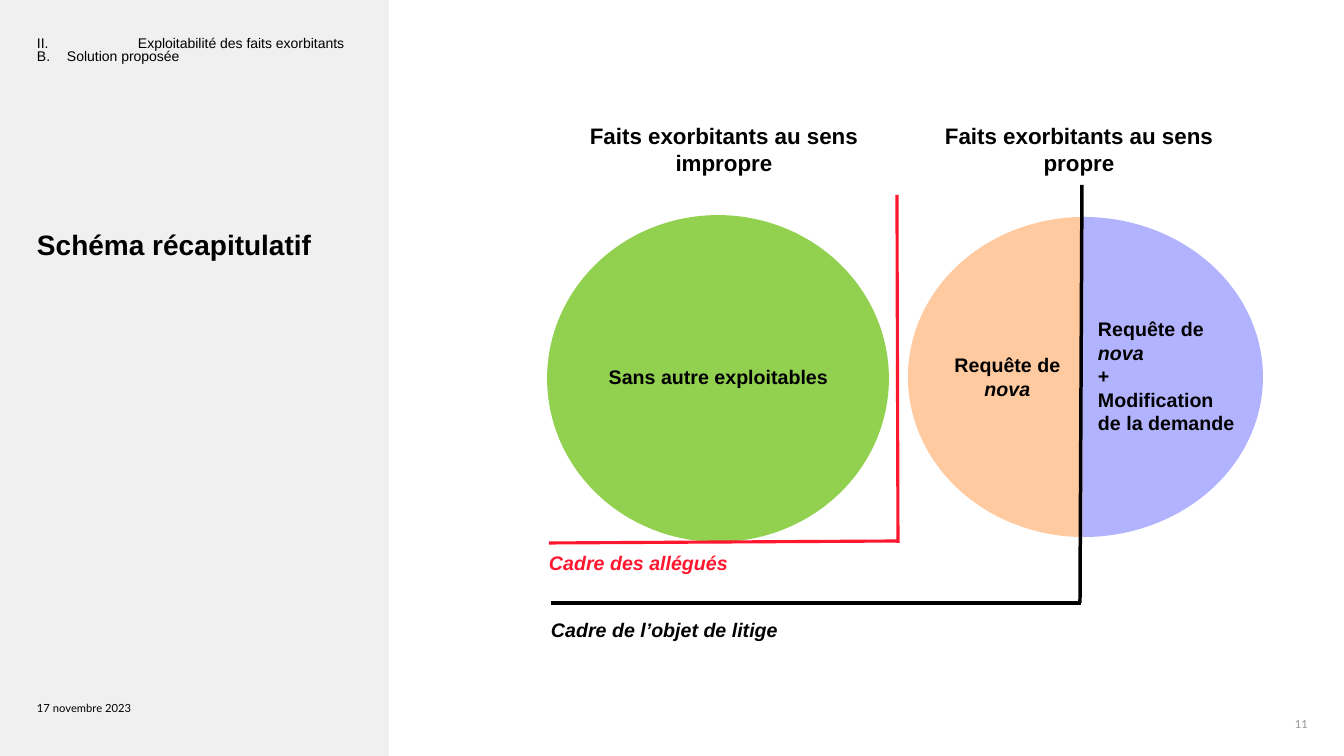
from pptx import Presentation
from pptx import util as u
from pptx.dml.color import RGBColor
from pptx.enum import shapes, text
from pptx.oxml.xmlchemy import OxmlElement

PX = 914400 / 100.8
BLACK, RED, GREY, PANEL = "000000", "FF172F", "969696", "F0F0F0"
GREEN, ORANGE, VIOLET = "92D050", "FFCA9F", "B2B3FF"
LEFT, CENTER, RIGHT = text.PP_ALIGN.LEFT, text.PP_ALIGN.CENTER, text.PP_ALIGN.RIGHT
TOP, MIDDLE, BOTTOM = text.MSO_ANCHOR.TOP, text.MSO_ANCHOR.MIDDLE, text.MSO_ANCHOR.BOTTOM
LINE_BREAK = ("\n", False)


def px(length):
    return u.Emu(round(length * PX))


def color(hex_string):
    return RGBColor.from_string(hex_string)


def add_shape(slide, kind, box, fill, line_width=0):
    shape = slide.shapes.add_shape(kind, *map(px, box))
    shape.shadow.inherit = False
    shape.fill.solid()
    shape.fill.fore_color.rgb = color(fill)
    if line_width:
        shape.line.color.rgb = color(fill)
        shape.line.width = u.Pt(line_width)
    else:
        shape.line.fill.background()
    return shape


def add_half_disc(slide, box, fill, start, end):
    """Draw a pie between two angles, in degrees clockwise from the right."""
    pie = add_shape(slide, shapes.MSO_SHAPE.PIE, box, fill, 1.5)
    for index, angle in enumerate((start, end)):
        pie.adjustments[index] = angle * 0.6


def add_line(slide, begin, end, line_color, width):
    line = slide.shapes.add_connector(
        shapes.MSO_CONNECTOR.STRAIGHT, *map(px, begin + end))
    line.line.color.rgb = color(line_color)
    line.line.width = u.Pt(width)
    line._element.spPr.append(OxmlElement("a:effectLst"))


def add_text(slide, box, paragraphs, size, bold=False, italic=False, font="Arial",
             text_color=BLACK, align=LEFT, anchor=TOP, before=0, spacing=1.0, hanging=0):
    """Write paragraphs; each is a string or a list of (string, italic) runs."""
    frame = slide.shapes.add_textbox(*map(px, box)).text_frame
    frame.word_wrap = True
    frame.vertical_anchor = anchor
    frame.margin_left = frame.margin_top = frame.margin_right = frame.margin_bottom = 0
    for index, content in enumerate(paragraphs):
        paragraph = frame.add_paragraph() if index else frame.paragraphs[0]
        paragraph.alignment = align
        paragraph.space_before = u.Pt(before)
        paragraph.line_spacing = spacing
        paragraph.font.name = font
        paragraph.font.size = u.Pt(size)
        paragraph.font.bold = bold
        paragraph.font.color.rgb = color(text_color)
        if hanging:
            properties = paragraph._p.get_or_add_pPr()
            properties.set("marL", str(px(hanging)))
            properties.set("indent", str(-px(hanging)))
        if isinstance(content, str):
            paragraph.font.italic = italic
            paragraph.text = content
            continue
        for part in content:
            if part == LINE_BREAK:
                paragraph.add_line_break()
            else:
                run = paragraph.add_run()
                run.text, run.font.italic = part


def add_side_panel(slide):
    add_shape(slide, shapes.MSO_SHAPE.RECTANGLE, (0, 0, 389, 756), PANEL)
    add_text(slide, (37, 24, 1032, 27), ["II.\tExploitabilité des faits exorbitants"], 10,
             anchor=BOTTOM, before=4, spacing=1.22, hanging=101)
    add_text(slide, (37, 49, 1032, 51), ["B.\tSolution proposée"], 10,
             spacing=0.9, hanging=30)
    add_text(slide, (37, 228, 318, 444), ["Schéma récapitulatif"], 20, bold=True, before=4)
    add_text(slide, (37, 701, 318, 15), ["17 novembre 2023"], 8, font="Lato", anchor=MIDDLE)


def add_discs(slide):
    add_shape(slide, shapes.MSO_SHAPE.OVAL, (549, 217, 338, 323), GREEN, 2.75)
    add_half_disc(slide, (909, 218, 350, 318), ORANGE, 90, 270)
    add_half_disc(slide, (905, 218, 357, 318), VIOLET, 270, 90)


def add_frames(slide):
    add_line(slide, (897, 195), (898, 543), RED, 2.25)
    add_line(slide, (899, 541), (549, 543), RED, 2.25)
    add_line(slide, (1082, 185), (1080, 603), BLACK, 2.5)
    add_line(slide, (1081, 603), (551, 603), BLACK, 2.5)


def add_labels(slide):
    request = [("Requête de ", False), ("nova", True)]
    change = [("+ ", False), LINE_BREAK, ("Modification de la demande", False)]
    for left, width, sense in ((562, 324, "impropre"), (935, 288, "propre")):
        add_text(slide, (left, 122, width, 54), [f"Faits exorbitants au sens {sense}"], 16,
                 bold=True, align=CENTER)
    add_text(slide, (551, 360, 335, 34), ["Sans autre exploitables"], 14, bold=True,
             align=CENTER, anchor=MIDDLE)
    add_text(slide, (950, 353, 115, 72), [request], 14, bold=True, align=CENTER)
    add_text(slide, (1098, 317, 141, 119), [request, change], 14, bold=True)
    add_text(slide, (549, 551, 219, 24), ["Cadre des allégués"], 14, bold=True,
             italic=True, text_color=RED)
    add_text(slide, (551, 618, 241, 24), ["Cadre de l’objet de litige"], 14, bold=True,
             italic=True)


def main():
    presentation = Presentation()
    presentation.slide_width, presentation.slide_height = px(1344), px(756)
    slide = presentation.slides.add_slide(presentation.slide_layouts[6])
    add_side_panel(slide)
    add_discs(slide)
    add_frames(slide)
    add_labels(slide)
    add_text(slide, (1260, 711, 48, 20), ["11"], 8, font="Lato", text_color=GREY,
             align=RIGHT, anchor=BOTTOM)
    presentation.save("out.pptx")


if __name__ == "__main__":
    main()
